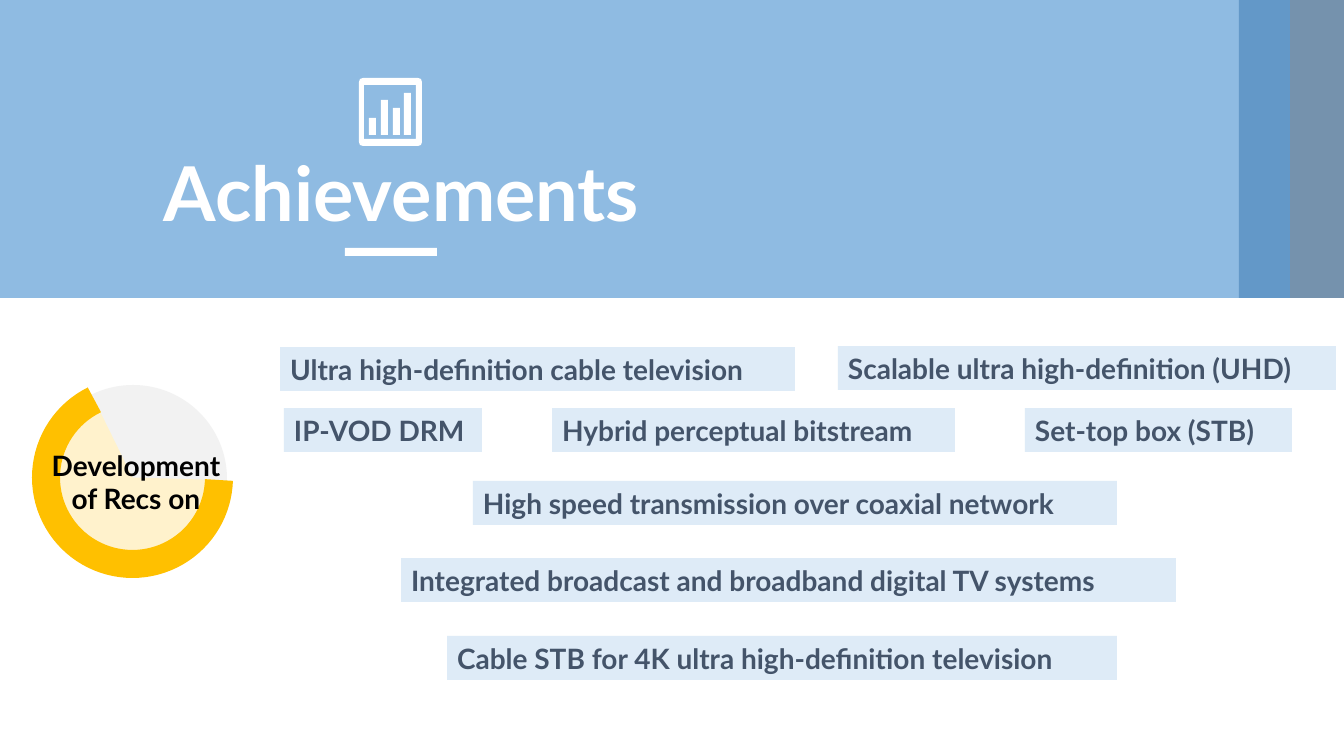
from lxml import etree
from pptx import Presentation
from pptx import util as u
from pptx.dml.color import RGBColor
from pptx.enum import shapes, text
from pptx.oxml.ns import qn

PX = 12192000 / 1344
COLORS = {
    "navy": "1F4E79", "blue": "5B9BD5", "white": "FFFFFF", "grey": "F2F2F2",
    "cream": "FFF2CC", "gold": "FFC000", "label": "DEEBF7", "slate": "44546A",
    "black": "000000",
}
KIND = shapes.MSO_SHAPE

prs = Presentation()
prs.slide_width, prs.slide_height = u.Emu(12192000), u.Emu(6858000)
slide = prs.slides.add_slide(prs.slide_layouts[6])


def paint(shape, fill, alpha=None):
    shape.shadow.inherit = False
    shape.fill.solid()
    shape.fill.fore_color.rgb = RGBColor.from_string(COLORS[fill])
    shape.line.fill.background()
    if alpha:
        color = shape.fill._xPr.find(qn("a:solidFill"))[0]
        etree.SubElement(color, qn("a:alpha")).set("val", str(alpha * 1000))
    return shape


def add_item(box, words="", kind=KIND.RECTANGLE, fill=None, alpha=None, size=20,
             color="black", align=text.PP_ALIGN.CENTER, inset=(10, 5)):
    place = [u.Emu(round(v * PX)) for v in box]
    if fill:
        item = paint(slide.shapes.add_shape(kind, *place), fill, alpha)
    else:
        item = slide.shapes.add_textbox(*place)
    if words:
        frame = item.text_frame
        frame.word_wrap = True
        frame.vertical_anchor = text.MSO_ANCHOR.TOP
        frame.margin_left = frame.margin_right = u.Emu(round(inset[0] * PX))
        frame.margin_top = frame.margin_bottom = u.Emu(round(inset[1] * PX))
        line = frame.paragraphs[0]
        line.alignment = align
        run = line.add_run()
        run.text = words
        run.font.name, run.font.size, run.font.bold = "Lato", u.Pt(size), True
        run.font.color.rgb = RGBColor.from_string(COLORS[color])
    return item


# Header band
add_item((1239, 0, 105, 298), fill="navy", alpha=61)
add_item((0, 0, 1290, 298), fill="blue", alpha=68)

# Bar chart icon: bevelled frame, its opening, then four bars
left, top, right, bottom = 359, 78, 422, 146
contours = [[
    (left + 4, top), (right - 4, top), (right - 1, top + 1), (right, top + 4),
    (right, bottom - 4), (right - 1, bottom - 1), (right - 4, bottom),
    (left + 4, bottom), (left + 1, bottom - 1), (left, bottom - 4),
    (left, top + 4), (left + 1, top + 1),
]]
openings = [(364, 85, 416, 139)]
openings += [(x, y, x + 7, 135) for x, y in ((369, 118), (381, 100), (393, 108), (404, 93))]
contours += [[(x2, y1), (x1, y1), (x1, y2), (x2, y2)] for x1, y1, x2, y2 in openings]
icon = slide.shapes.build_freeform(*contours[0][0], scale=PX)
for number, points in enumerate(contours):
    if number:
        icon.move_to(*points[0])
    icon.add_line_segments(points[1:], close=True)
paint(icon.convert_to_shape(), "white")

# Title and underline
add_item((36, 144, 731, 97), "Achievements", size=54, color="white", inset=(5, 2))
add_item((345, 248, 92, 8), fill="white")

# Progress ring
add_item((39, 385, 188, 188), kind=KIND.OVAL, fill="grey")
ring = add_item((46, 391, 173, 173), kind=KIND.ARC, fill="cream")
ring.adjustments[0], ring.adjustments[1] = 1, 146.32
ring.line.color.rgb = RGBColor.from_string(COLORS["gold"])
ring.line.width = u.Pt(20)
add_item((36, 443, 200, 78), "Development of Recs on")

# Recommendation labels
recommendations = [
    (280, 347, 515, "Ultra high-definition cable television"),
    (838, 346, 498, "Scalable ultra high-definition (UHD)"),
    (284, 408, 198, "IP-VOD DRM"),
    (552, 408, 403, "Hybrid perceptual bitstream"),
    (1025, 408, 267, "Set-top box (STB)"),
    (473, 481, 644, "High speed transmission over coaxial network"),
    (401, 558, 775, "Integrated broadcast and broadband digital TV systems"),
    (447, 636, 670, "Cable STB for 4K ultra high-definition television"),
]
for x, y, width, topic in recommendations:
    add_item((x, y, width, 44), topic, fill="label", color="slate",
             align=text.PP_ALIGN.LEFT)

prs.save("out.pptx")
